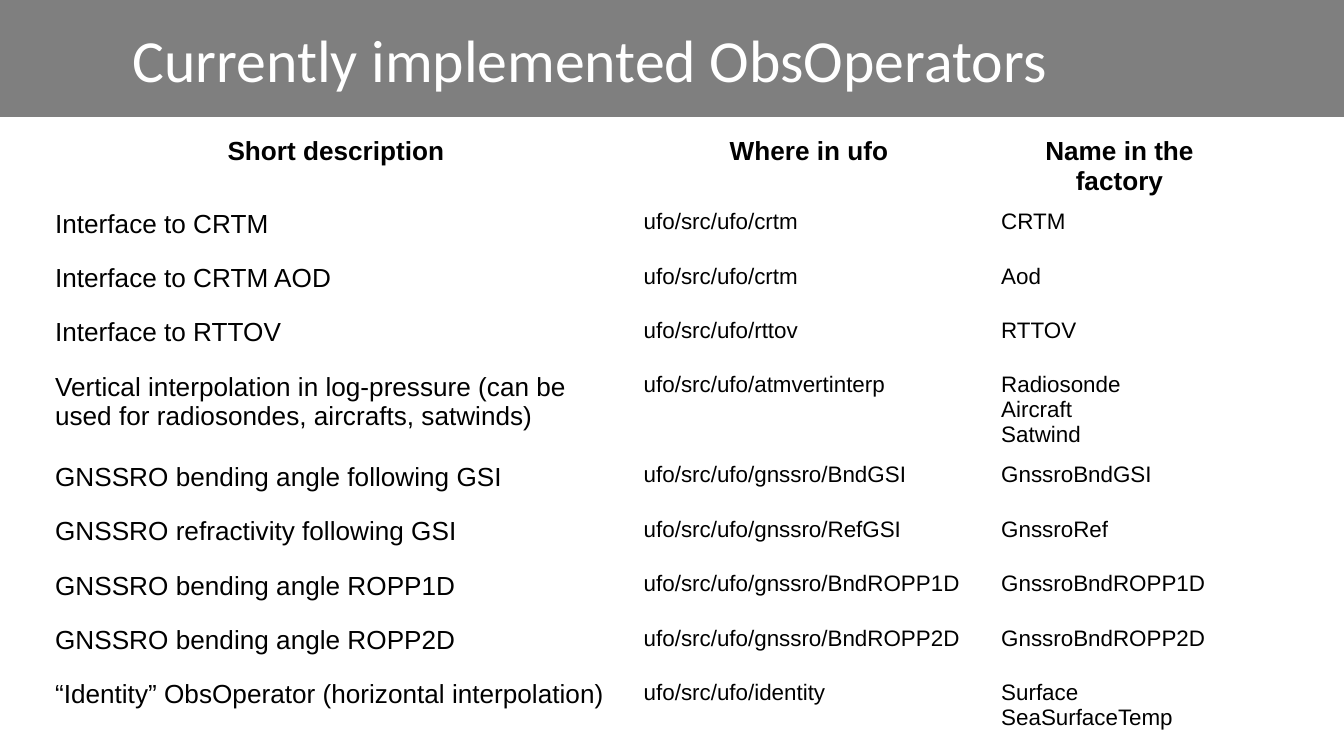
"""Build a slide listing the implemented ObsOperators in a table."""
import pptx
import pptx.dml.color
import pptx.enum.shapes
import pptx.enum.text
import pptx.oxml
import pptx.oxml.ns
import pptx.util

Inches = pptx.util.Inches
Pt = pptx.util.Pt
ALIGN = pptx.enum.text.PP_ALIGN

BLACK = pptx.dml.color.RGBColor(0x00, 0x00, 0x00)
WHITE = pptx.dml.color.RGBColor(0xFF, 0xFF, 0xFF)

SLIDE_W = Inches(10)
SLIDE_H = SLIDE_W * 9 // 16
BAR_H = Inches(0.87)
COLUMNS = [Inches(4.38), Inches(2.66), Inches(1.96)]
ROW_H = Inches(4.05) // 10
BODY_SIZES = [14, 12, 12]

HEADER = ["Short description", "Where in ufo", "Name in the factory"]
OPERATORS = [
    ["Interface to CRTM", "crtm", "CRTM"],
    ["Interface to CRTM AOD", "crtm", "Aod"],
    ["Interface to RTTOV", "rttov", "RTTOV"],
    ["Vertical interpolation in log-pressure (can be used for radiosondes, aircrafts, satwinds)",
     "atmvertinterp", "Radiosonde\nAircraft\nSatwind"],
    ["GNSSRO bending angle following GSI", "gnssro/BndGSI", "GnssroBndGSI"],
    ["GNSSRO refractivity following GSI", "gnssro/RefGSI", "GnssroRef"],
    ["GNSSRO bending angle ROPP1D", "gnssro/BndROPP1D", "GnssroBndROPP1D"],
    ["GNSSRO bending angle ROPP2D", "gnssro/BndROPP2D", "GnssroBndROPP2D"],
    ["“Identity” ObsOperator (horizontal interpolation)", "identity",
     "Surface\nSeaSurfaceTemp"],
]


def write(tf, text, size, color, font="Arial", bold=False, align=ALIGN.LEFT):
    """Fill a text frame and format every run alike."""
    tf.text = text
    for p in tf.paragraphs:
        p.alignment = align
        for r in p.runs:
            r.font.name = font
            r.font.size = Pt(size)
            r.font.bold = bold
            r.font.color.rgb = color


def add_bar(s):
    """Draw the half-transparent band behind the title."""
    sp = s.shapes.add_shape(pptx.enum.shapes.MSO_SHAPE.RECTANGLE, 0, 0, SLIDE_W, BAR_H)
    sp.shadow.inherit = False
    sp.fill.solid()
    sp.fill.fore_color.rgb = BLACK
    sp.line.fill.background()
    color = sp.fill._xPr.find(".//" + pptx.oxml.ns.qn("a:srgbClr"))
    alpha = pptx.oxml.parse_xml(f'<a:alpha {pptx.oxml.ns.nsdecls("a")} val="50000"/>')
    color.append(alpha)


def add_title(s, text):
    """Place the title, centred in its box on the band."""
    sp = s.shapes.add_textbox(Inches(0.14), 0, Inches(8.5), BAR_H)
    tf = sp.text_frame
    tf.word_wrap = True
    tf.vertical_anchor = pptx.enum.text.MSO_ANCHOR.MIDDLE
    write(tf, text, 32, WHITE, font="Calibri", align=ALIGN.CENTER)


def add_operator_table(s):
    """Place the unfilled table with its header and one row per operator."""
    count = len(OPERATORS) + 1
    frame = s.shapes.add_table(count, len(COLUMNS), Inches(0.31), Inches(0.97),
                               sum(COLUMNS), ROW_H * count)
    table = frame.table
    table.first_row = False
    table.horz_banding = False
    for column, width in zip(table.columns, COLUMNS):
        column.width = width
    for cell in table.iter_cells():
        cell.fill.background()
        cell.margin_bottom = Inches(0.02)
    for col, text in enumerate(HEADER):
        write(table.cell(0, col).text_frame, text, 14, BLACK, bold=True, align=ALIGN.CENTER)
    for row, (description, folder, name) in enumerate(OPERATORS, start=1):
        texts = [description, f"ufo/src/ufo/{folder}", name]
        for col, (text, size) in enumerate(zip(texts, BODY_SIZES)):
            write(table.cell(row, col).text_frame, text, size, BLACK)


def main():
    """Build and save the slide."""
    prs = pptx.Presentation()
    prs.slide_width, prs.slide_height = SLIDE_W, SLIDE_H
    s = prs.slides.add_slide(prs.slide_layouts[6])
    add_bar(s)
    add_title(s, "Currently implemented ObsOperators")
    add_operator_table(s)
    prs.save("out.pptx")


if __name__ == "__main__":
    main()
